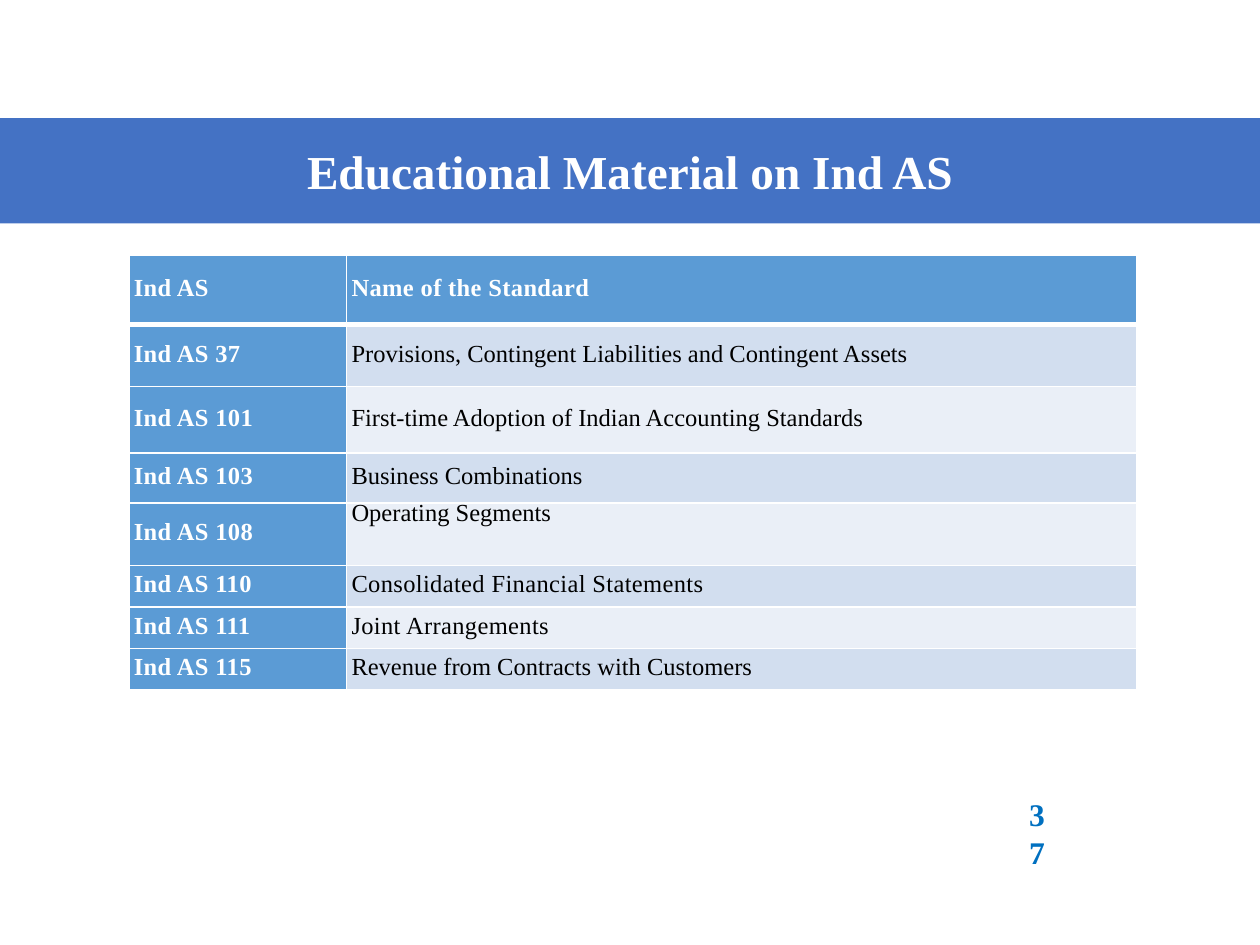
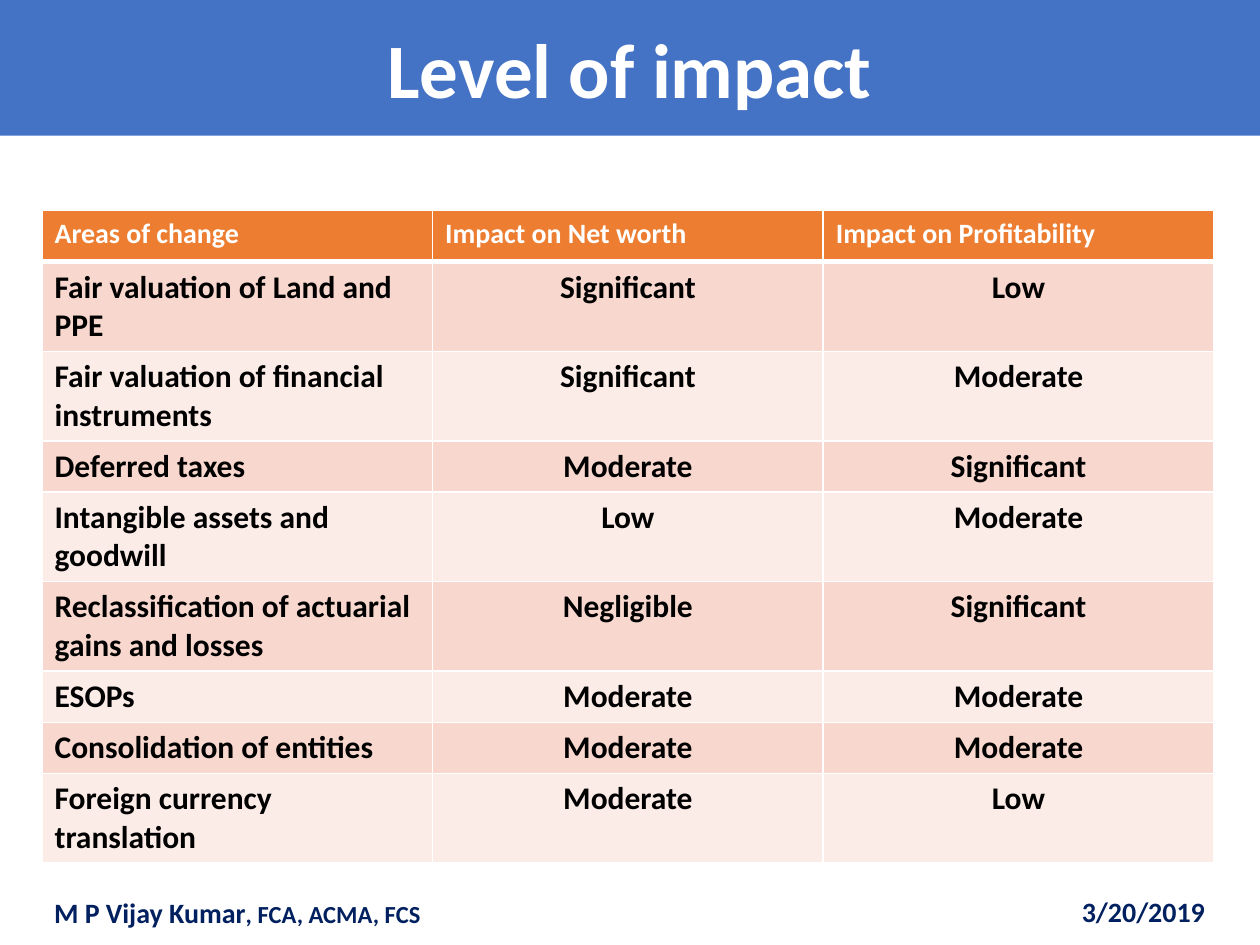
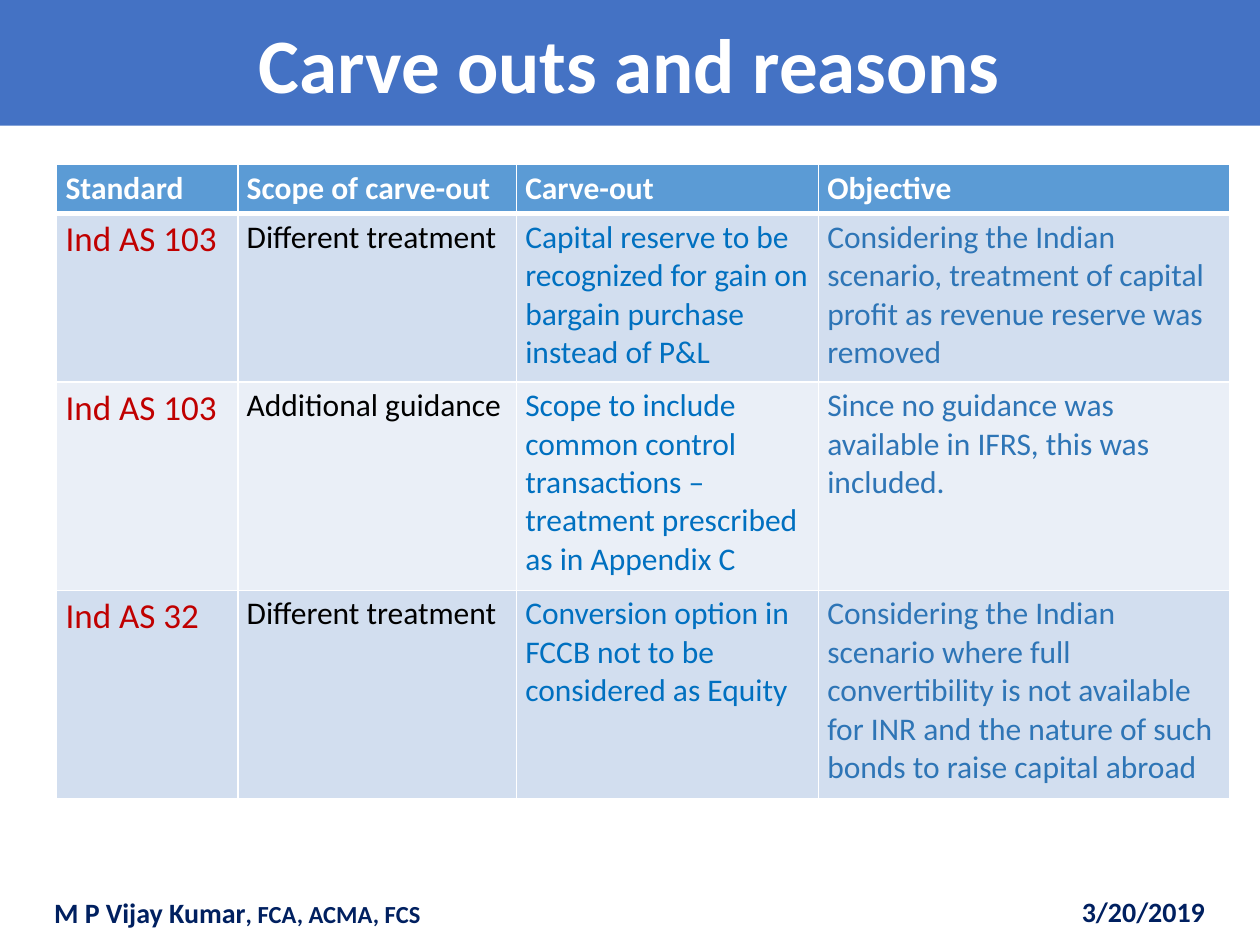
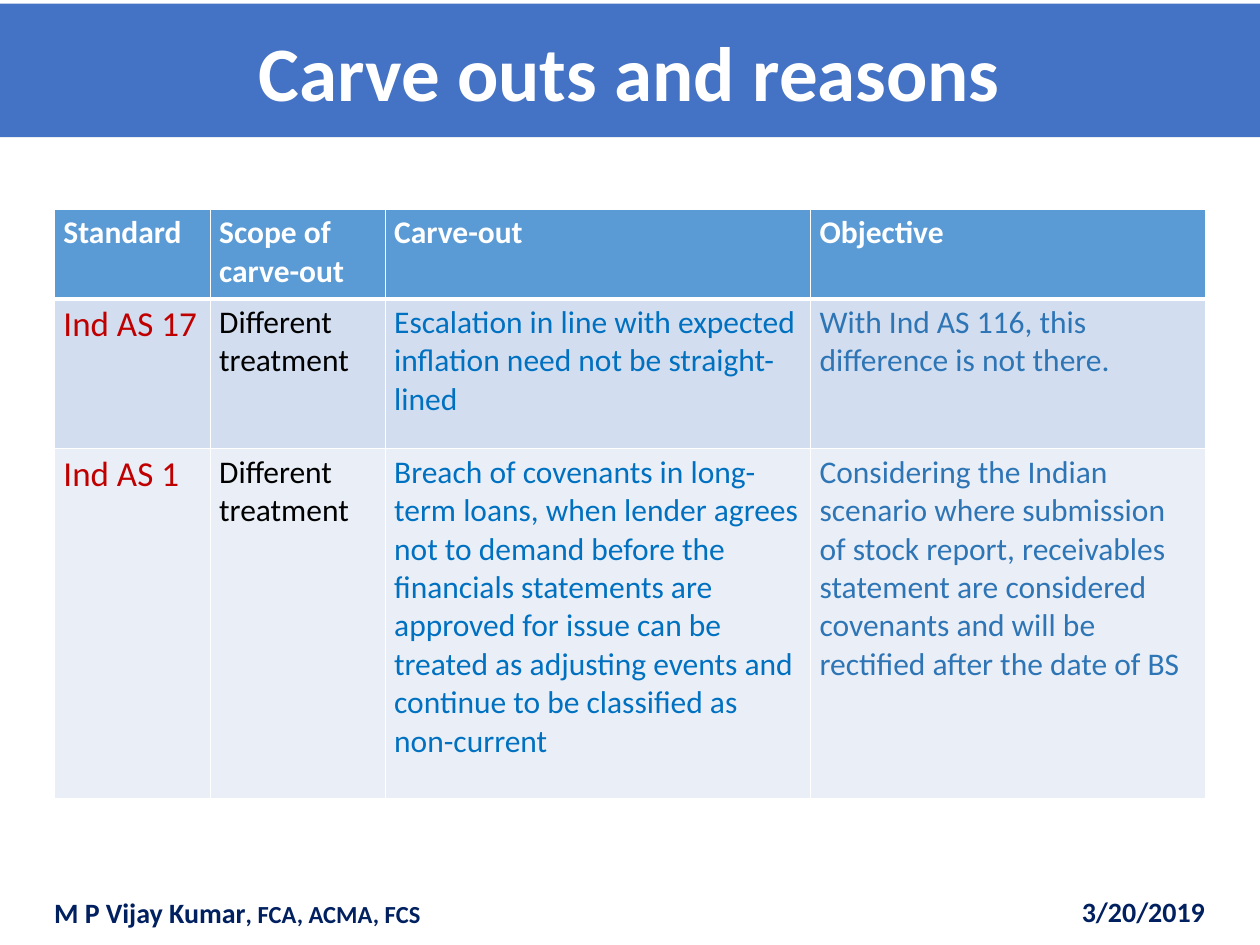
"""Build four slides of accounting-standard tables with shared title bands and footers."""

from dataclasses import dataclass, field, replace

from lxml import etree
from pptx import Presentation
from pptx.dml.color import RGBColor
from pptx.enum.shapes import MSO_SHAPE
from pptx.enum.text import MSO_ANCHOR, PP_ALIGN
from pptx.oxml.ns import qn
from pptx.util import Pt

RECTANGLE = MSO_SHAPE.RECTANGLE
TOP, MIDDLE = MSO_ANCHOR.TOP, MSO_ANCHOR.MIDDLE
LEFT, CENTER, RIGHT = PP_ALIGN.LEFT, PP_ALIGN.CENTER, PP_ALIGN.RIGHT

SLIDE_WIDTH, SLIDE_HEIGHT = 720, 540
SANS, SERIF = "Calibri", "Times New Roman"
WHITE, BLACK, NAVY = "FFFFFF", "000000", "002060"
BAND_BLUE, HEADER_BLUE, HEADER_ORANGE = "4472C4", "5B9BD5", "ED7D31"
BRIGHT_BLUE, STEEL_BLUE, RED = "0070C0", "2E75B6", "C00000"
BLUE_STRIPES = ("D2DEEF", "EAEFF7")
ORANGE_STRIPES = ("F8D7CE", "FCECE8")
THIN_BORDER, HEADER_BORDER = 1, 3


@dataclass(frozen=True)
class TextStyle:
    """Look of one paragraph; lengths in points."""

    size: float
    color: str
    bold: bool = False
    font: str = SANS
    alignment: PP_ALIGN = LEFT
    anchor: MSO_ANCHOR = TOP
    line_spacing: float | None = None
    space_before: float = 0
    space_after: float = 0
    letter_spacing: float = 0
    fill: str | None = None


@dataclass(frozen=True)
class Box:
    """Position and size in points."""

    left: float
    top: float
    width: float
    height: float


@dataclass(frozen=True)
class TableSpec:
    """Contents, grid and styles of one table; lengths in points."""

    left: float
    top: float
    column_widths: list[float]
    row_heights: list[float]
    rows: list[list[str]]
    header_style: TextStyle
    column_styles: list[TextStyle]
    header_fill: str = HEADER_BLUE
    stripes: tuple[str, str] = BLUE_STRIPES
    margins: tuple[float, float] = (5.1, 2.6)
    special_styles: dict[tuple[int, int], TextStyle] = field(default_factory=dict)


@dataclass(frozen=True)
class SlideSpec:
    """Title band, table and footer choice of one slide."""

    title: str
    band: Box
    title_style: TextStyle
    table: TableSpec
    page_number: str = ""


TITLE = TextStyle(44, WHITE, True, alignment=CENTER, anchor=MIDDLE)
SERIF_TITLE = replace(TITLE, size=27, font=SERIF)
PAGE_NUMBER = TextStyle(18, BRIGHT_BLUE, True, SERIF)
FOOTER = TextStyle(16, NAVY, True)
FOOTER_DATE = replace(FOOTER, alignment=RIGHT)
FOOTER_DEGREES_SIZE = 14

STANDARD_NAME = TextStyle(14, BLACK, font=SERIF, anchor=MIDDLE,
                          line_spacing=13.5, space_before=3, space_after=3)
SPACED_NAME = replace(STANDARD_NAME, letter_spacing=0.2)
STANDARD_HEADER = replace(SPACED_NAME, color=WHITE, bold=True)
STANDARD_CODE = replace(STANDARD_HEADER, fill=HEADER_BLUE)

IMPACT_AREA = TextStyle(18, BLACK, True)
IMPACT_LEVEL = replace(IMPACT_AREA, alignment=CENTER)
ONE_LINE, TWO_LINES = 29.2, 51.2

CARVE_HEADER = TextStyle(18, WHITE, True)
CARVE_COLUMNS = [TextStyle(20, RED), TextStyle(18, BLACK),
                 TextStyle(18, BRIGHT_BLUE), TextStyle(18, STEEL_BLUE)]
CARVE_HEADINGS = ["Standard", "Scope of carve-out", "Carve-out", "Objective"]

STANDARDS_TABLE = TableSpec(
    73.6, 145.6, [124.4, 451.6], [40, 35.2, 38.2, 28.6, 35.5, 23.8, 23.8, 23.8],
    [
        ["Ind AS", "Name of the Standard"],
        ["Ind AS 37", "Provisions, Contingent Liabilities and Contingent Assets"],
        ["Ind AS 101", "First-time Adoption of Indian Accounting Standards"],
        ["Ind AS 103", "Business Combinations"],
        ["Ind AS 108", "Operating Segments"],
        ["Ind AS 110", "Consolidated Financial Statements"],
        ["Ind AS 111", "Joint Arrangements"],
        ["Ind AS 115", "Revenue from Contracts with Customers"],
    ],
    STANDARD_HEADER, [STANDARD_CODE, STANDARD_NAME], margins=(2.9, 0),
    special_styles={
        (2, 1): replace(STANDARD_NAME, space_before=22.5),
        (4, 1): replace(STANDARD_NAME, anchor=TOP),
        (5, 1): SPACED_NAME,
        (6, 1): SPACED_NAME,
    },
)

IMPACT_TABLE = TableSpec(
    24, 120.4, [223.2] * 3,
    [ONE_LINE, TWO_LINES, TWO_LINES, ONE_LINE, TWO_LINES, TWO_LINES,
     ONE_LINE, ONE_LINE, TWO_LINES],
    [
        ["Areas of change", "Impact on Net worth", "Impact on Profitability"],
        ["Fair valuation of Land and PPE", "Significant", "Low"],
        ["Fair valuation of financial instruments", "Significant", "Moderate"],
        ["Deferred taxes", "Moderate", "Significant"],
        ["Intangible assets and goodwill", "Low", "Moderate"],
        ["Reclassification of actuarial gains and losses", "Negligible", "Significant"],
        ["ESOPs", "Moderate", "Moderate"],
        ["Consolidation of entities", "Moderate", "Moderate"],
        ["Foreign currency translation", "Moderate", "Low"],
    ],
    TextStyle(16, WHITE, True), [IMPACT_AREA, IMPACT_LEVEL, IMPACT_LEVEL],
    HEADER_ORANGE, ORANGE_STRIPES, (7.2, 3.6),
)

COMBINATIONS_TABLE = TableSpec(
    32.4, 94, [103.5, 159.2, 172.6, 235], [28.2, 96.2, 119, 119],
    [
        CARVE_HEADINGS,
        ["Ind AS 103", "Different treatment",
         "Capital reserve to be recognized for gain on bargain purchase instead of P&L",
         "Considering the Indian scenario, treatment of capital profit as revenue "
         "reserve was removed"],
        ["Ind AS 103", "Additional guidance",
         "Scope to include common control transactions – treatment prescribed as in "
         "Appendix C",
         "Since no guidance was available in IFRS, this was included."],
        ["Ind AS 32", "Different treatment",
         "Conversion option in FCCB not to be considered as Equity",
         "Considering the Indian scenario where full convertibility is not available "
         "for INR and the nature of such bonds to raise capital abroad"],
    ],
    CARVE_HEADER, CARVE_COLUMNS,
)

LEASES_TABLE = TableSpec(
    31.2, 119.6, [89, 100, 243.1, 225.5], [51.2, 85.6, 200],
    [
        CARVE_HEADINGS,
        ["Ind AS 17", "Different treatment",
         "Escalation in line with expected inflation need not be straight-lined",
         "With Ind AS 116, this difference is not there."],
        ["Ind AS 1", "Different treatment",
         "Breach of covenants in long-term loans, when lender agrees not to demand "
         "before the financials statements are approved for issue can be treated as "
         "adjusting events and continue to be classified as non-current",
         "Considering the Indian scenario where submission of stock report, receivables "
         "statement are considered covenants and will be rectified after the date of BS"],
    ],
    CARVE_HEADER, CARVE_COLUMNS,
)

SLIDES = [
    SlideSpec("Educational Material on Ind AS", Box(0, 67.5, SLIDE_WIDTH, 60.2),
              SERIF_TITLE, STANDARDS_TABLE, "37"),
    SlideSpec("Level of impact", Box(0, 0, SLIDE_WIDTH, 77.6), TITLE, IMPACT_TABLE),
    SlideSpec("Carve outs and reasons", Box(0, 0, SLIDE_WIDTH, 71.8), TITLE,
              COMBINATIONS_TABLE),
    SlideSpec("Carve outs and reasons", Box(0, 2, SLIDE_WIDTH, 76.4), TITLE,
              LEASES_TABLE),
]


def rgb(color: str) -> RGBColor:
    """Turn a hex string into a colour."""
    return RGBColor.from_string(color)


def points(box: Box) -> tuple[Pt, Pt, Pt, Pt]:
    """Give the four lengths of a box."""
    return Pt(box.left), Pt(box.top), Pt(box.width), Pt(box.height)


def write_text(text_frame, text: str, style: TextStyle):
    """Write one styled paragraph and return it."""
    paragraph = text_frame.paragraphs[0]
    run = paragraph.add_run()
    run.text = text
    paragraph.alignment = style.alignment
    paragraph.space_before = Pt(style.space_before)
    paragraph.space_after = Pt(style.space_after)
    if style.line_spacing:
        paragraph.line_spacing = Pt(style.line_spacing)
    paragraph.font.name = style.font
    paragraph.font.size = Pt(style.size)
    paragraph.font.bold = style.bold
    paragraph.font.color.rgb = rgb(style.color)
    if style.letter_spacing:
        run.font._element.set("spc", str(round(style.letter_spacing * 100))) if hasattr(
            run.font, "_element") else run._r.get_or_add_rPr().set(
            "spc", str(round(style.letter_spacing * 100)))
    return paragraph


def add_text(slide, box: Box, text: str, style: TextStyle):
    """Add a wrapping text box and return its paragraph."""
    text_frame = slide.shapes.add_textbox(*points(box)).text_frame
    text_frame.word_wrap = True
    text_frame.vertical_anchor = style.anchor
    return write_text(text_frame, text, style)


def add_title_band(slide, spec: SlideSpec) -> None:
    """Add the full-width band that carries the title."""
    band = slide.shapes.add_shape(RECTANGLE, *points(spec.band))
    band.shadow.inherit = False
    band.fill.solid()
    band.fill.fore_color.rgb = rgb(BAND_BLUE)
    band.line.fill.background()
    band.text_frame.word_wrap = True
    band.text_frame.vertical_anchor = spec.title_style.anchor
    write_text(band.text_frame, spec.title, spec.title_style)


def add_footer(slide) -> None:
    """Add the speaker and date line."""
    add_text(slide, Box(455.8, 507.6, 239.8, 28.8), "3/20/2019", FOOTER_DATE)
    speaker = add_text(slide, Box(23.8, 508.3, 282.2, 28.8), "M P Vijay Kumar", FOOTER)
    degrees = speaker.add_run()
    degrees.text = ", FCA, ACMA, FCS"
    degrees.font.size = Pt(FOOTER_DEGREES_SIZE)


def set_borders(cell, top: float, bottom: float) -> None:
    """Draw the white borders of a cell."""
    properties = cell._tc.get_or_add_tcPr()
    widths = {"a:lnL": THIN_BORDER, "a:lnR": THIN_BORDER, "a:lnT": top, "a:lnB": bottom}
    for tag, width in widths.items():
        line = etree.SubElement(properties, qn(tag), w=str(Pt(width)))
        fill = etree.SubElement(line, qn("a:solidFill"))
        etree.SubElement(fill, qn("a:srgbClr"), val=WHITE)


def fill_cell(cell, text: str, style: TextStyle, fill: str,
              margins: tuple[float, float]) -> None:
    """Write and colour one table cell."""
    cell.margin_left = cell.margin_right = Pt(margins[0])
    cell.margin_top = cell.margin_bottom = Pt(margins[1])
    cell.vertical_anchor = style.anchor
    cell.fill.solid()
    cell.fill.fore_color.rgb = rgb(fill)
    write_text(cell.text_frame, text, style)


def add_table(slide, spec: TableSpec) -> None:
    """Add a striped table with a header row."""
    box = Box(spec.left, spec.top, sum(spec.column_widths), sum(spec.row_heights))
    table = slide.shapes.add_table(
        len(spec.rows), len(spec.column_widths), *points(box)).table
    for column, width in zip(table.columns, spec.column_widths):
        column.width = Pt(width)
    for row, height in zip(table.rows, spec.row_heights):
        row.height = Pt(height)
    for row_index, texts in enumerate(spec.rows):
        is_header = row_index == 0
        top = HEADER_BORDER if row_index == 1 else THIN_BORDER
        bottom = HEADER_BORDER if is_header else THIN_BORDER
        row_fill = spec.header_fill if is_header else spec.stripes[(row_index - 1) % 2]
        for column_index, text in enumerate(texts):
            column_style = spec.column_styles[column_index]
            style = spec.header_style if is_header else spec.special_styles.get(
                (row_index, column_index), column_style)
            cell = table.cell(row_index, column_index)
            set_borders(cell, top, bottom)
            fill_cell(cell, text, style, style.fill or row_fill, spec.margins)


def main() -> None:
    """Build and save the presentation."""
    presentation = Presentation()
    presentation.slide_width = Pt(SLIDE_WIDTH)
    presentation.slide_height = Pt(SLIDE_HEIGHT)
    blank_layout = presentation.slide_layouts[6]
    for spec in SLIDES:
        slide = presentation.slides.add_slide(blank_layout)
        add_title_band(slide, spec)
        add_table(slide, spec.table)
        if spec.page_number:
            add_text(slide, Box(581, 450.7, 21.6, 21.6), spec.page_number, PAGE_NUMBER)
        else:
            add_footer(slide)
    presentation.save("out.pptx")


if __name__ == "__main__":
    main()
